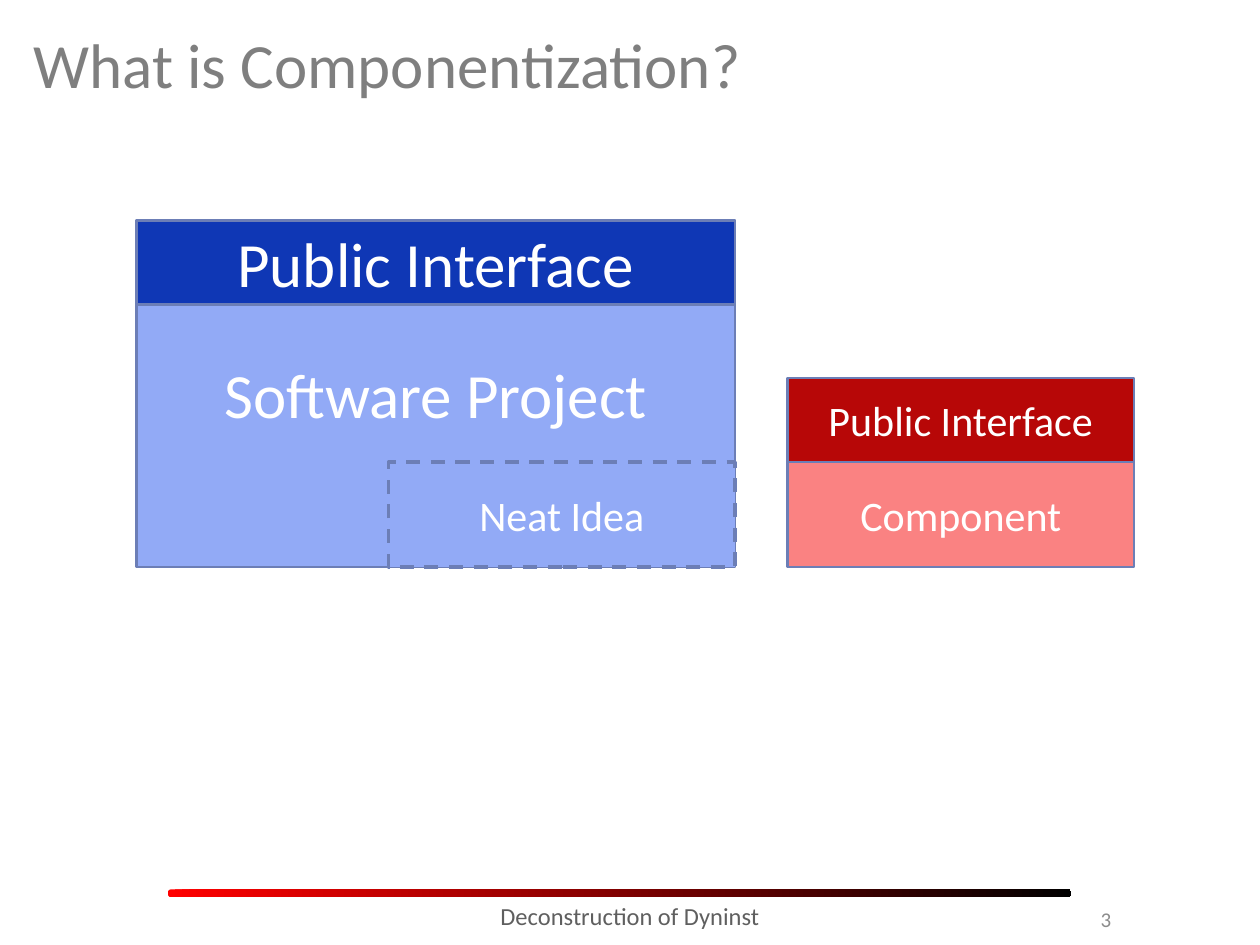
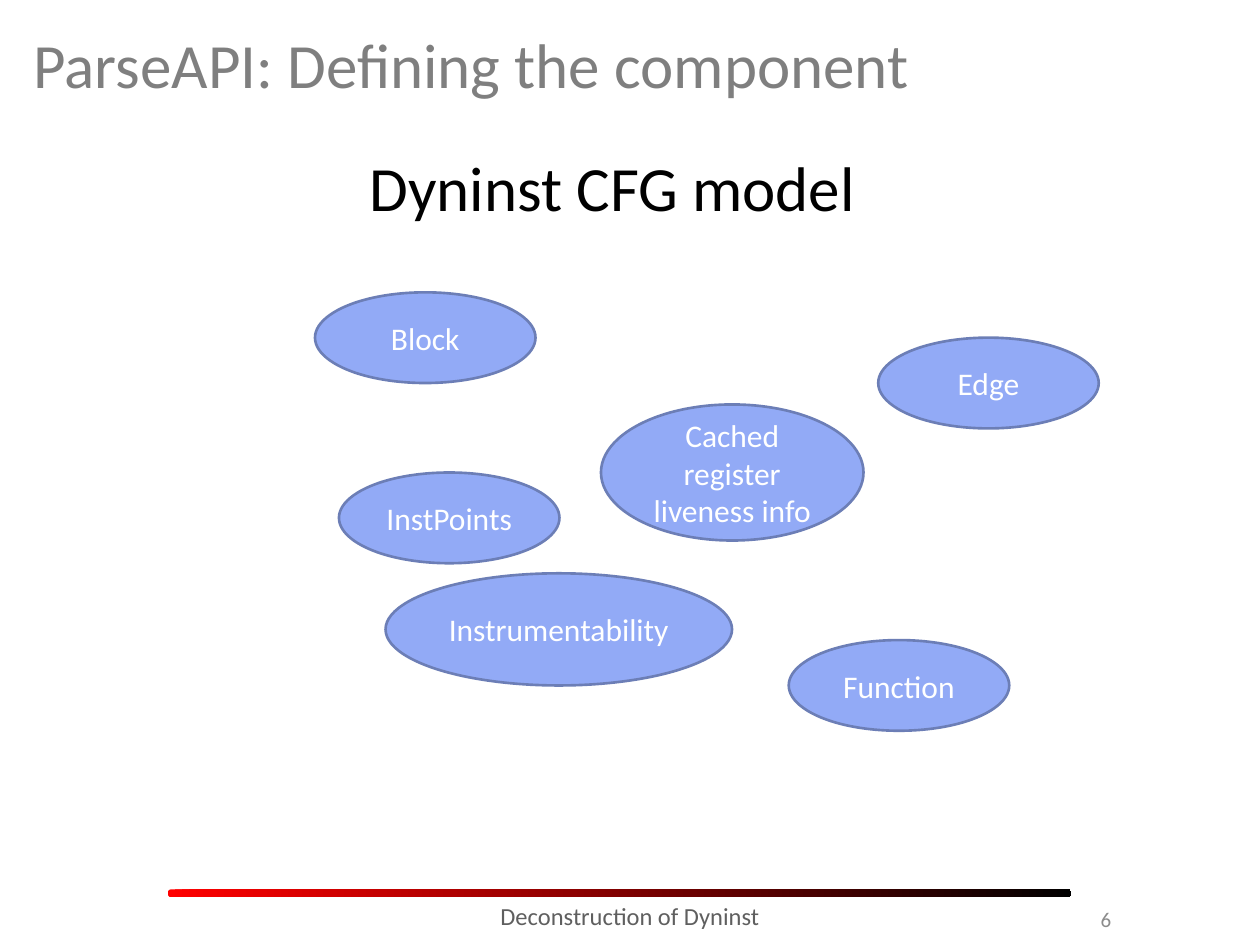
from dataclasses import dataclass

from pptx import Presentation
from pptx.dml.color import RGBColor
from pptx.enum.dml import MSO_LINE
from pptx.enum.shapes import MSO_SHAPE
from pptx.enum.text import MSO_ANCHOR, PP_ALIGN
from pptx.util import Inches, Pt

COLORS = {
    "title": "7F7F7F",
    "footer": "5F5F5F",
    "number": "8C8C8C",
    "black": "000000",
    "white": "FFFFFF",
    "outline": "6C7EB6",
    "project": "92AAF6",
    "project_interface": "0F37B5",
    "component": "FA8282",
    "component_interface": "B70707",
    "band_start": "FF0000",
    "band_end": "000000",
}
FONT = "Calibri"
COLUMNS, ROWS = 120, 90
CELL = Inches(10) // COLUMNS
INTERFACE_ROWS = 8
IDEA_COLUMNS, IDEA_ROWS = 33, 10
SMALL_OVAL = (21, 8.64)

CONCEPTS = [
    ("Block", 0, 0, SMALL_OVAL),
    ("Edge", 53.64, 4.32, SMALL_OVAL),
    ("Function", 45.12, 33.12, SMALL_OVAL),
    ("Cached register liveness info", 27.24, 10.68, (25, 12.96)),
    ("Instrumentability", 6.72, 26.76, (33, 10.68)),
    ("InstPoints", 2.28, 17.16, SMALL_OVAL),
]


@dataclass
class Box:
    left: float
    top: float
    width: float
    height: float

    def inner(self, left, top, width, height):
        return Box(self.left + left, self.top + top, width, height)

    def lengths(self):
        return [round(value * CELL) for value in (self.left, self.top, self.width, self.height)]


PAGE = Box(0, 0, COLUMNS, ROWS)


def color(name):
    return RGBColor.from_string(COLORS[name])


def apply_format(target, values):
    for name, value in values.items():
        setattr(target, name, value)


def write_text(shape, text, size, color_name, align=PP_ALIGN.CENTER,
               anchor=MSO_ANCHOR.MIDDLE, wrap=True):
    apply_format(shape.text_frame, {"text": text, "word_wrap": wrap, "vertical_anchor": anchor})
    paragraph = shape.text_frame.paragraphs[0]
    paragraph.alignment = align
    font = paragraph.runs[0].font
    apply_format(font, {"name": FONT, "size": Pt(size)})
    font.color.rgb = color(color_name)


def add_text(slide, box, text, size, color_name, **options):
    write_text(slide.shapes.add_textbox(*box.lengths()), text, size, color_name, **options)


def add_block(slide, box, text, size, fill, kind=MSO_SHAPE.RECTANGLE, line_width=1.5, dash=None):
    shape = slide.shapes.add_shape(kind, *box.lengths())
    shape.shadow.inherit = False
    shape.fill.solid()
    shape.fill.fore_color.rgb = color(fill)
    shape.line.color.rgb = color("outline")
    apply_format(shape.line, {"width": Pt(line_width), "dash_style": dash})
    write_text(shape, text, size, "white")


def add_band(slide, box):
    band = slide.shapes.add_shape(MSO_SHAPE.ROUNDED_RECTANGLE, *box.lengths())
    band.shadow.inherit = False
    band.adjustments[0] = 0.33
    band.line.fill.background()
    band.fill.gradient()
    band.fill.gradient_angle = 0
    for stop, position, name in zip(band.fill.gradient_stops, (0, 1), ("band_start", "band_end")):
        stop.position = position
        stop.color.rgb = color(name)


def add_footer(slide, box, number):
    add_band(slide, box.inner(0, 0, 86, 0.72))
    add_text(slide, box.inner(13, 0.5, 62, 4.8), "Deconstruction of Dyninst", 14, "footer",
             anchor=MSO_ANCHOR.TOP)
    add_text(slide, box.inner(75, 0.28, 16, 5), str(number), 12, "number", align=PP_ALIGN.RIGHT)


def add_page(presentation, title, number):
    slide = presentation.slides.add_slide(presentation.slide_layouts[5])
    heading = slide.shapes.title
    lengths = PAGE.inner(2, 1, 116, 10).lengths()
    apply_format(heading, dict(zip(("left", "top", "width", "height"), lengths)))
    write_text(heading, title, 36, "title", align=PP_ALIGN.LEFT)
    add_footer(slide, PAGE.inner(16, 84.72, 91, 5.28), number)
    return slide


def add_interface(slide, box, size, fill):
    add_block(slide, box.inner(0, 0, box.width, INTERFACE_ROWS), "Public Interface", size, fill)


def add_project(slide, box):
    add_block(slide, box, "Software Project", 36, "project")
    idea = box.inner(box.width - IDEA_COLUMNS, box.height - IDEA_ROWS, IDEA_COLUMNS, IDEA_ROWS)
    add_block(slide, idea, "Neat Idea", 24, "project", line_width=2, dash=MSO_LINE.DASH)
    add_interface(slide, box, 36, "project_interface")


def add_component(slide, box):
    add_interface(slide, box, 24, "component_interface")
    body = box.inner(0, INTERFACE_ROWS, box.width, box.height - INTERFACE_ROWS)
    add_block(slide, body, "Component", 24, "component")


def add_concepts(slide, box):
    for text, left, top, size in CONCEPTS:
        add_block(slide, box.inner(left, top, *size), text, 18, "project", kind=MSO_SHAPE.OVAL)


def build_componentization(presentation):
    slide = add_page(presentation, "What is Componentization?", 3)
    add_project(slide, PAGE.inner(13, 21, 57, 33))
    add_component(slide, PAGE.inner(75, 36, IDEA_COLUMNS, INTERFACE_ROWS + IDEA_ROWS))


def build_model(presentation):
    slide = add_page(presentation, "ParseAPI: Defining the component", 6)
    add_concepts(slide, PAGE.inner(30, 27.84, 75, 42))
    add_text(slide, PAGE.inner(34, 13.56, 51.72, 8.52), "Dyninst CFG model", 36, "black",
             align=PP_ALIGN.LEFT, anchor=MSO_ANCHOR.TOP, wrap=False)


def main():
    presentation = Presentation()
    apply_format(presentation, {"slide_width": COLUMNS * CELL, "slide_height": ROWS * CELL})
    build_componentization(presentation)
    build_model(presentation)
    presentation.save("out.pptx")


if __name__ == "__main__":
    main()
